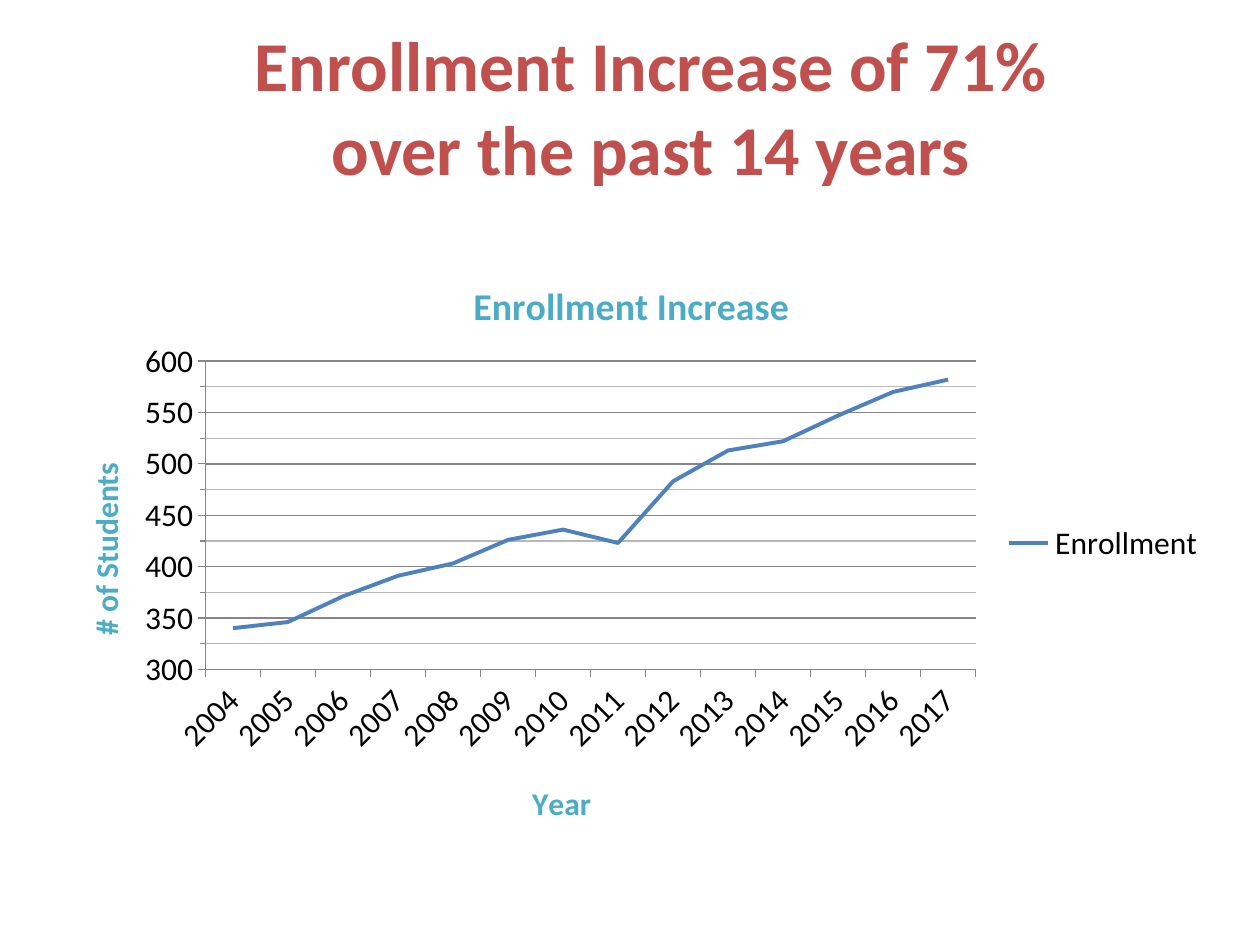
from lxml.etree import SubElement
from pptx import Presentation
from pptx.chart.data import CategoryChartData
from pptx.dml.color import RGBColor
from pptx.enum.chart import XL_CHART_TYPE, XL_LEGEND_POSITION, XL_TICK_MARK
from pptx.enum.text import MSO_ANCHOR, PP_ALIGN
from pptx.oxml import parse_xml
from pptx.oxml.ns import nsdecls, qn
from pptx.util import Emu, Pt

# Content
HEADING = ["Enrollment Increase of 71%", "over the past 14 years"]
CHART_TITLE = "Enrollment Increase"
YEAR_TITLE = "Year"
STUDENTS_TITLE = "# of Students"
SERIES_NAME = "Enrollment"
FIRST_YEAR = 2004
STUDENTS = [340, 346, 371, 391, 403, 426, 436, 423, 483, 513, 522, 547, 570, 582]

# Style
FONT = "Calibri"
RED = RGBColor(0xC0, 0x50, 0x4D)
TEAL = RGBColor(0x4B, 0xAC, 0xC6)
BLUE = RGBColor(0x4F, 0x81, 0xBD)
BLACK = RGBColor(0, 0, 0)
GREY = RGBColor(0x86, 0x86, 0x86)
LIGHT_GREY = RGBColor(0xB7, 0xB7, 0xB7)

# Places in px: left, top, width, height
SLIDE_SIZE = (1260, 945)
HEADING_BOX = (84, 31, 1134, 199)
CHART_BOX = (42, 242, 1176, 602)
PLOT_BOX = (205, 361, 770, 308)
CHART_TITLE_AT = (466, 272)
YEAR_TITLE_AT = (526, 776)
STUDENTS_TITLE_AT = (78, 457)


def px(length):
    return Emu(round(length * 914400 / 126))


def style_font(font, size, color, bold=False):
    font.name = FONT
    font.size = Pt(size)
    font.bold = bold
    font.color.rgb = color


def manual_layout(left, top, width=None, height=None):
    """Layout element holding fractions of the chart area."""
    layout = parse_xml(f"<c:layout {nsdecls('c')}><c:manualLayout/></c:layout>")
    chart_left, chart_top, chart_width, chart_height = CHART_BOX
    values = []
    if width:
        values.append(("layoutTarget", "inner"))
    values += [("xMode", "edge"), ("yMode", "edge"),
               ("x", round((left - chart_left) / chart_width, 3)),
               ("y", round((top - chart_top) / chart_height, 3))]
    if width:
        values += [("w", round(width / chart_width, 3)),
                   ("h", round(height / chart_height, 3))]
    for tag, value in values:
        SubElement(layout[0], qn(f"c:{tag}")).set("val", str(value))
    return layout


def drop_layout(element):
    for layout in element.findall(qn("c:layout")):
        element.remove(layout)


def write_title(title, text, size, place):
    run = title.text_frame.paragraphs[0].add_run()
    run.text = text
    style_font(run.font, size, TEAL, bold=True)
    element = title._element
    drop_layout(element)
    element.find(qn("c:tx")).addnext(manual_layout(*place))


presentation = Presentation()
presentation.slide_width, presentation.slide_height = map(px, SLIDE_SIZE)
slide = presentation.slides.add_slide(presentation.slide_layouts[6])

# Heading
heading = slide.shapes.add_textbox(*map(px, HEADING_BOX))
frame = heading.text_frame
frame.word_wrap = True
frame.vertical_anchor = MSO_ANCHOR.MIDDLE
frame.margin_top = 0
frame.margin_bottom = px(50)
paragraph = frame.paragraphs[0]
paragraph.alignment = PP_ALIGN.CENTER
for index, line in enumerate(HEADING):
    if index:
        paragraph.add_line_break()
    run = paragraph.add_run()
    run.text = line
    style_font(run.font, 40, RED, bold=True)

# Enrollment chart
data = CategoryChartData()
data.categories = [str(FIRST_YEAR + i) for i in range(len(STUDENTS))]
data.add_series(SERIES_NAME, STUDENTS)
chart = slide.shapes.add_chart(XL_CHART_TYPE.LINE, *map(px, CHART_BOX), data).chart
style_font(chart.font, 18, BLACK)
chart.has_title = True
write_title(chart.chart_title, CHART_TITLE, 21.6, CHART_TITLE_AT)
chart.has_legend = True
chart.legend.position = XL_LEGEND_POSITION.RIGHT
chart.legend.include_in_layout = False

plot = chart.plots[0]
plot.vary_by_categories = False
line_series = plot.series[0]
line_series.smooth = False
line_series.format.line.color.rgb = BLUE
line_series.format.line.width = Pt(2.25)
plot_area = chart._chartSpace.chart.plotArea
drop_layout(plot_area)
plot_area.insert(0, manual_layout(*PLOT_BOX))

# Axes
years, students = chart.category_axis, chart.value_axis
for axis, text, place in ((years, YEAR_TITLE, YEAR_TITLE_AT),
                          (students, STUDENTS_TITLE, STUDENTS_TITLE_AT)):
    axis.has_title = True
    write_title(axis.axis_title, text, 18, place)
    axis.major_tick_mark = XL_TICK_MARK.OUTSIDE
    axis.format.line.color.rgb = GREY
    style_font(axis.tick_labels.font, 18, BLACK)
years._element.find(qn("c:txPr")).find(qn("a:bodyPr")).set("rot", "-2700000")
students.axis_title.text_frame._txBody.bodyPr.set("rot", "-5400000")
students.axis_title.text_frame._txBody.bodyPr.set("vert", "horz")

students.minimum_scale, students.maximum_scale = 300, 600
students.major_unit, students.minor_unit = 50, 25
students.minor_tick_mark = XL_TICK_MARK.OUTSIDE
students.has_major_gridlines = students.has_minor_gridlines = True
for gridlines, color in ((students.major_gridlines, GREY),
                         (students.minor_gridlines, LIGHT_GREY)) if hasattr(
                             students, "minor_gridlines") else (
                         (students.major_gridlines, GREY),):
    gridlines.format.line.color.rgb = color
minor = students._element.find(qn("c:minorGridlines"))
if len(minor) == 0:
    minor.append(parse_xml(
        f"<c:spPr {nsdecls('c', 'a')}><a:ln><a:solidFill>"
        f"<a:srgbClr val='{LIGHT_GREY}'/></a:solidFill></a:ln></c:spPr>"))

presentation.save("out.pptx")
